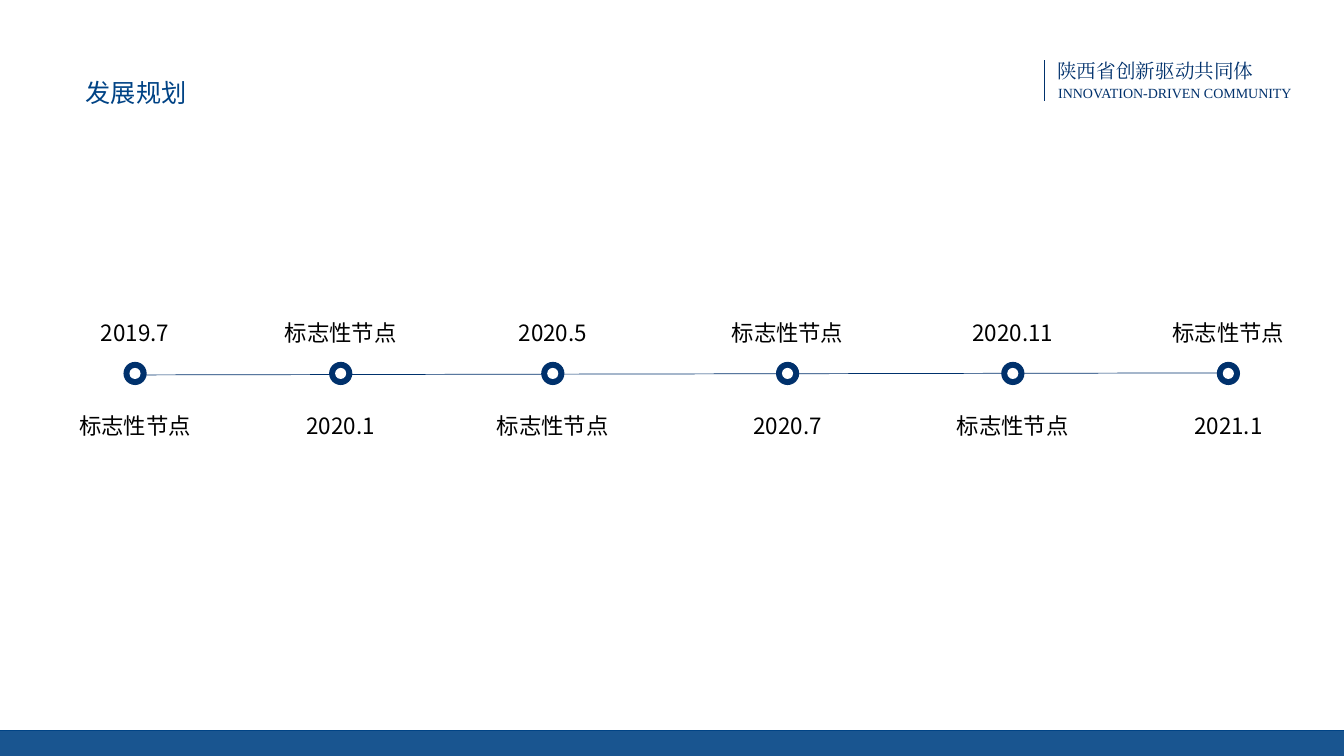
import dataclasses

import lxml.etree
import pptx
import pptx.dml.color
import pptx.enum.shapes
import pptx.enum.text
import pptx.oxml.ns
import pptx.util

WIDTH, HEIGHT = pptx.util.Inches(13.333), pptx.util.Inches(7.5)


@dataclasses.dataclass(frozen=True)
class Theme:
    navy: str = "00316C"
    blue: str = "004385"
    black: str = "000000"
    white: str = "FFFFFF"
    sans: str = "Noto Sans CJK SC"
    serif: str = "Times New Roman"
    title: int = 18
    label: int = 16
    header: int = 14
    tagline: int = 10
    hairline: float = 0.5


THEME = Theme()

# Timeline: centre (percent of slide width), text above, text below
MILESTONE = "标志性节点"
NODES = [
    (10.05, "2019.7", MILESTONE),
    (25.35, MILESTONE, "2020.1"),
    (41.13, "2020.5", MILESTONE),
    (58.6, MILESTONE, "2020.7"),
    (75.36, "2020.11", MILESTONE),
    (91.4, MILESTONE, "2021.1"),
]
AXIS_Y = 49.4
LABEL_W, LABEL_H = 13.35, 4.93
ABOVE_Y, BELOW_Y = 41.6, 53.87
RING, HOLE = 3.07, 1.47  # diameters, percent of slide height


def across(share):
    """Percent of the slide width."""
    return round(WIDTH * share / 100)


def down(share):
    """Percent of the slide height."""
    return round(HEIGHT * share / 100)


def rgb(color):
    return pptx.dml.color.RGBColor.from_string(color)


def add_shape(s, kind, x, y, w, h, color):
    sp = s.shapes.add_shape(kind, x, y, w, h)
    sp.shadow.inherit = False
    sp.fill.solid()
    sp.fill.fore_color.rgb = rgb(color)
    sp.line.fill.background()
    return sp


def add_line(s, x1, y1, x2, y2, color):
    line = s.shapes.add_connector(
        pptx.enum.shapes.MSO_CONNECTOR.STRAIGHT,
        across(x1), down(y1), across(x2), down(y2))
    line.line.color.rgb = rgb(color)
    line.line.width = pptx.util.Pt(THEME.hairline)
    sp_pr = line._element.spPr
    lxml.etree.SubElement(sp_pr, pptx.oxml.ns.qn("a:effectLst"))


def add_text(s, text, x, y, w, h, size, color, font=THEME.sans, centered=False):
    box = s.shapes.add_textbox(across(x), down(y), across(w), down(h))
    tf = box.text_frame
    tf.word_wrap = True
    tf.auto_size = pptx.enum.text.MSO_AUTO_SIZE.SHAPE_TO_FIT_TEXT
    p = tf.paragraphs[0]
    align = pptx.enum.text.PP_ALIGN
    p.alignment = align.CENTER if centered else align.LEFT
    r = p.add_run()
    r.text = text
    r.font.size = pptx.util.Pt(size)
    r.font.color.rgb = rgb(color)
    r.font.name = font
    # Chinese characters take their face from the East Asian font
    ea = lxml.etree.SubElement(r.font._element, pptx.oxml.ns.qn("a:ea"))
    ea.set("typeface", font)


def add_circle(s, center, diameter, color):
    d = down(diameter)
    add_shape(s, pptx.enum.shapes.MSO_SHAPE.OVAL,
              across(center) - d // 2, down(AXIS_Y) - d // 2, d, d, color)


def add_footer(s):
    top = 96.67
    bar = add_shape(s, pptx.enum.shapes.MSO_SHAPE.RECTANGLE,
                    0, down(top), WIDTH, HEIGHT - down(top), THEME.blue)
    color = bar.fill._xPr.find(".//" + pptx.oxml.ns.qn("a:srgbClr"))
    alpha = lxml.etree.SubElement(color, pptx.oxml.ns.qn("a:alpha"))
    alpha.set("val", "90000")
    add_line(s, 0, top, 100, top, THEME.blue)


def add_header(s):
    add_text(s, "INNOVATION-DRIVEN COMMUNITY", 78, 10.53, 22, 3.6,
             THEME.tagline, THEME.navy, THEME.serif)
    add_text(s, "陕西省创新驱动共同体", 77.93, 7.07, 18.68, 4.53,
             THEME.header, THEME.navy, THEME.serif)
    add_line(s, 77.7, 8, 77.7, 13.33, THEME.navy)
    add_text(s, "发展规划", 5.63, 9.6, 21.08, 5.33, THEME.title, THEME.blue)


def add_timeline(s):
    add_line(s, 9.6, 49.6, 90.6, 49.33, THEME.navy)
    for center, above, below in NODES:
        add_circle(s, center, RING, THEME.navy)
        add_circle(s, center, HOLE, THEME.white)
        for text, y in ((above, ABOVE_Y), (below, BELOW_Y)):
            add_text(s, text, center - LABEL_W / 2, y, LABEL_W, LABEL_H,
                     THEME.label, THEME.black, centered=True)


def main():
    prs = pptx.Presentation()
    prs.slide_width, prs.slide_height = WIDTH, HEIGHT
    s = prs.slides.add_slide(prs.slide_layouts[6])
    add_footer(s)
    add_header(s)
    add_timeline(s)
    prs.save("out.pptx")


if __name__ == "__main__":
    main()
